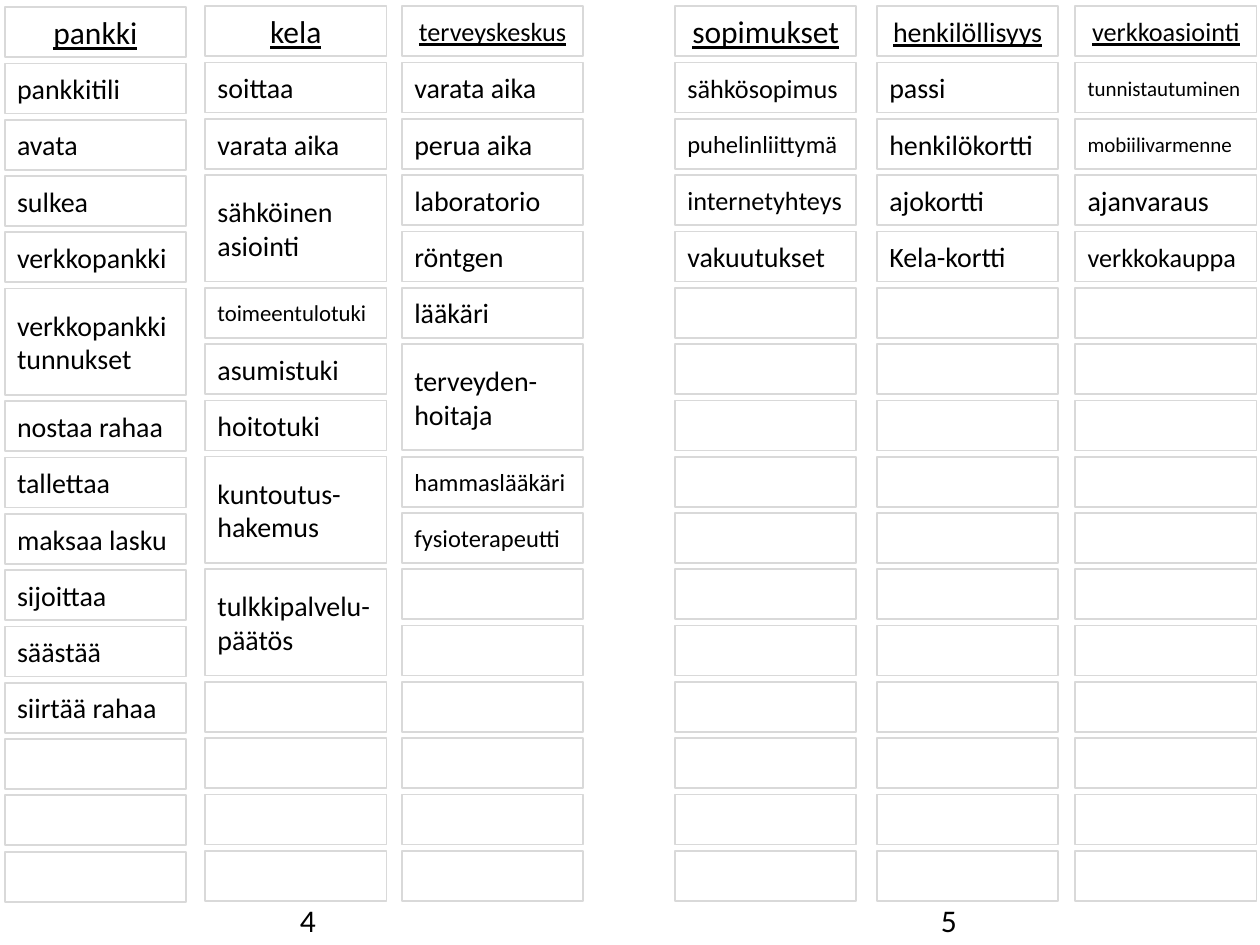
from pptx import Presentation
from pptx import util as u
from pptx.dml import color
from pptx.enum import shapes, text

COLORS = {"text": "000000", "border": "D9D9D9"}
FONT = "Calibri"
ROW_COUNT = 16
ROW_STEP = 32.17
CARD_WIDTH = 103.7
CARD_HEIGHT = 28.6
WORD_SIZE = 16

COLUMNS = [
    (2.7, 4.1, ("pankki", 18), [
        "pankkitili", "avata", "sulkea", "verkkopankki",
        ("verkkopankkitunnukset", WORD_SIZE, 2), "nostaa rahaa", "tallettaa",
        "maksaa lasku", "sijoittaa", "säästää", "siirtää rahaa"]),
    (117.2, 3.6, ("kela", 18), [
        "soittaa", "varata aika", ("sähköinen asiointi", WORD_SIZE, 2),
        ("toimeentulotuki", 13, 1), "asumistuki", "hoitotuki",
        ("kuntoutus-hakemus", WORD_SIZE, 2),
        ("tulkkipalvelu-päätös", WORD_SIZE, 2)]),
    (229.7, 3.6, ("terveyskeskus", 15), [
        "varata aika", "perua aika", "laboratorio", "röntgen", "lääkäri",
        ("terveyden-hoitaja", WORD_SIZE, 2), ("hammaslääkäri", 14, 1),
        ("fysioterapeutti", 14, 1)]),
    (385.7, 3.6, ("sopimukset", 18), [
        ("sähkösopimus", 15, 1), ("puhelinliittymä", 14, 1),
        ("internetyhteys", 15, 1), "vakuutukset"]),
    (501.1, 3.6, ("henkilöllisyys", 16), [
        "passi", "henkilökortti", "ajokortti", "Kela-kortti"]),
    (614.4, 3.6, ("verkkoasiointi", 15), [
        ("tunnistautuminen", 12, 1), ("mobiilivarmenne", 12, 1),
        "ajanvaraus", ("verkkokauppa", 15, 1)]),
]
PAGE_NUMBERS = [("4", 164.2, 20.2), ("5", 530.6, 25.9)]


def rgb(name):
    return color.RGBColor.from_string(COLORS[name])


def write_text(shape, content, size, alignment=text.PP_ALIGN.LEFT, underline=None):
    shape.text_frame.word_wrap = True
    paragraph = shape.text_frame.paragraphs[0]
    paragraph.alignment = alignment
    run = paragraph.add_run()
    run.text = content
    run.font.name = FONT
    run.font.size = u.Pt(size)
    run.font.color.rgb = rgb("text")
    run.font.underline = underline


def add_card(slide, left, top, rows=1):
    height = CARD_HEIGHT + (rows - 1) * ROW_STEP
    shape = slide.shapes.add_shape(
        shapes.MSO_SHAPE.RECTANGLE,
        u.Pt(left), u.Pt(top), u.Pt(CARD_WIDTH), u.Pt(height))
    shape.shadow.inherit = False
    shape.fill.background()
    shape.line.color.rgb = rgb("border")
    shape.line.width = u.Pt(1)
    shape.text_frame.vertical_anchor = text.MSO_ANCHOR.MIDDLE
    return shape


def add_column(slide, left, top, heading, words):
    write_text(add_card(slide, left, top), *heading,
               alignment=text.PP_ALIGN.CENTER, underline=True)
    row = 1
    for word in words:
        content, size, rows = (word, WORD_SIZE, 1) if isinstance(word, str) else word
        card = add_card(slide, left, top + row * ROW_STEP, rows)
        write_text(card, content, size)
        row += rows
    for empty_row in range(row, ROW_COUNT):
        add_card(slide, left, top + empty_row * ROW_STEP)


def add_page_number(slide, number, left, width):
    box = slide.shapes.add_textbox(
        u.Pt(left), u.Pt(511.2), u.Pt(width), u.Pt(29.1))
    write_text(box, number, 18)
    box.text_frame.auto_size = text.MSO_AUTO_SIZE.SHAPE_TO_FIT_TEXT


def main():
    presentation = Presentation()
    presentation.slide_width = u.Pt(720)
    presentation.slide_height = u.Pt(540)
    slide = presentation.slides.add_slide(presentation.slide_layouts[6])
    for page_number in PAGE_NUMBERS:
        add_page_number(slide, *page_number)
    for column in COLUMNS:
        add_column(slide, *column)
    presentation.save("out.pptx")


if __name__ == "__main__":
    main()
